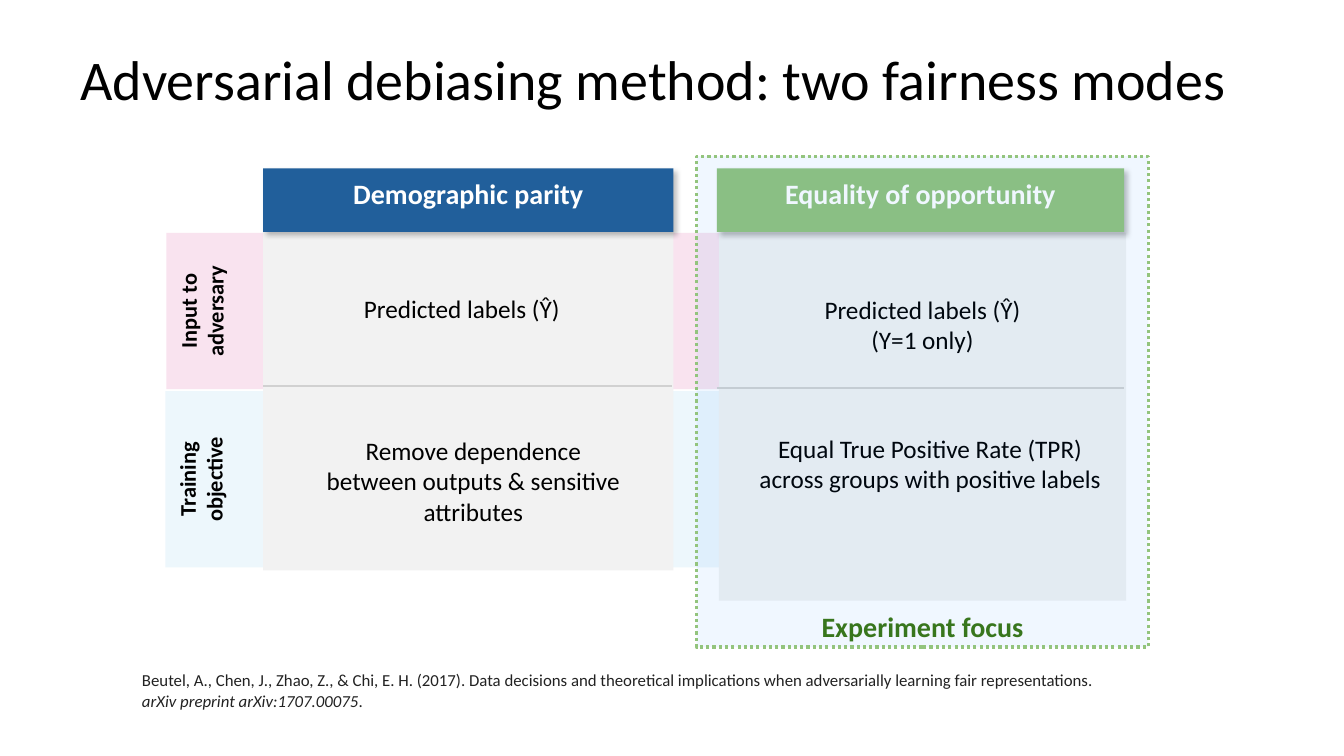
import pptx
import pptx.util
import pptx.dml.color
import pptx.enum.dml
import pptx.enum.shapes
import pptx.enum.text
import pptx.oxml
import pptx.oxml.ns

Inches, Pt = pptx.util.Inches, pptx.util.Pt
FONT = "Calibri"
NS = pptx.oxml.ns.nsdecls("a")

TITLE = "Adversarial debiasing method: two fairness modes"
BANDS = [
    ("Training objective", "EDF7FC", (1.64, 3.88, 9.51, 1.75)),
    ("Input to adversary", "F9E3EF", (1.65, 2.31, 9.51, 1.55)),
]
PANELS = [(2.61, 1.99, 4.07, 3.67), (7.13, 2.31, 4.04, 3.65)]
HEADERS = [
    ("Equality of opportunity", "93C47D", (7.11, 1.67, 4.04, 0.63)),
    ("Demographic parity", "215F9B", (2.61, 1.67, 4.07, 0.63)),
]
DIVIDERS = [(2.61, 3.83, 4.06), (7.11, 3.85, 4.04)]
CELLS = [
    (["Predicted labels (Ŷ)"], (3.47, 2.86, 2.22, 0.4)),
    (["Predicted labels (Ŷ)", "(Y=1 only)"], (7.13, 2.87, 4.04, 0.71)),
    (["Remove dependence", "between outputs & sensitive attributes"],
     (2.66, 4.27, 4.07, 1.32)),
    (["Equal True Positive Rate (TPR)", "across groups with positive labels"],
     (7.19, 4.25, 4.07, 0.71)),
]
FOCUS_BOX = (6.91, 1.55, 4.48, 4.87)
FOCUS = "Experiment focus"
CITATION = [
    "Beutel, A., Chen, J., Zhao, Z., & Chi, E. H. (2017). Data decisions and "
    "theoretical implications when adversarially learning fair representations.",
    "arXiv preprint arXiv:1707.00075",
]

prs = pptx.Presentation()
prs.slide_width, prs.slide_height = Inches(13.33), Inches(7.5)
s = prs.slides.add_slide(prs.slide_layouts[6])


def rgb(value):
    return pptx.dml.color.RGBColor.from_string(value)


def write(sp, lines, size, color="000000", bold=False, center=True,
          inset=(0.1, 0.05)):
    tf = sp.text_frame
    tf.word_wrap = True
    tf.vertical_anchor = pptx.enum.text.MSO_ANCHOR.TOP
    tf.margin_left = tf.margin_right = Inches(inset[0])
    tf.margin_top = tf.margin_bottom = Inches(inset[1])
    tf.text = "\n".join(lines)
    align = pptx.enum.text.PP_ALIGN
    for p in tf.paragraphs:
        p.alignment = align.CENTER if center else align.LEFT
        for r in p.runs:
            r.font.name, r.font.size, r.font.bold = FONT, Pt(size), bold
            r.font.color.rgb = rgb(color)
    return tf


def rect(box, fill):
    sp = s.shapes.add_shape(pptx.enum.shapes.MSO_SHAPE.RECTANGLE,
                            *map(Inches, box))
    sp.shadow.inherit = False
    sp.fill.solid()
    sp.fill.fore_color.rgb = rgb(fill)
    sp.line.fill.background()
    return sp


def textbox(box, lines, size, **style):
    return write(s.shapes.add_textbox(*map(Inches, box)), lines, size, **style)


def add_shadow(sp):
    effects = sp._element.spPr.find(pptx.oxml.ns.qn("a:effectLst"))
    effects.append(pptx.oxml.parse_xml(
        f'<a:outerShdw {NS} blurRad="{Pt(4)}" dist="{Pt(3)}" dir="2700000" '
        'algn="bl" rotWithShape="0"><a:srgbClr val="000000">'
        '<a:alpha val="25000"/></a:srgbClr></a:outerShdw>'))


for label, fill, (x, y, w, h) in BANDS:
    sp = rect((x + (w - h) / 2, y + (h - w) / 2, h, w), fill)
    sp.rotation = 270
    write(sp, [label], 16, bold=True, inset=(0.08, 0.08))

for box in PANELS:
    rect(box, "F2F2F2")

for label, fill, box in HEADERS:
    sp = rect(box, fill)
    add_shadow(sp)
    write(sp, [label], 20, "FFFFFF", bold=True, inset=(0.08, 0.08))

for x, y, w in DIVIDERS:
    line = s.shapes.add_connector(pptx.enum.shapes.MSO_CONNECTOR.STRAIGHT,
                                  *map(Inches, (x, y, x + w, y)))
    line.line.color.rgb = rgb("D1D1D1")
    line.line.width = Pt(1.5)
    line._element.spPr.append(pptx.oxml.parse_xml(f"<a:effectLst {NS}/>"))

for lines, box in CELLS:
    textbox(box, lines, 18)

focus = rect(FOCUS_BOX, "007DFF")
focus.fill._xPr.find(".//" + pptx.oxml.ns.qn("a:srgbClr")).append(
    pptx.oxml.parse_xml(f'<a:alpha {NS} val="6000"/>'))
focus.line.color.rgb = rgb("93C47D")
focus.line.width = Pt(2.25)
focus.line.dash_style = pptx.enum.dml.MSO_LINE.ROUND_DOT
textbox((7.74, 5.92, 2.82, 0.61), [FOCUS], 20, color="38761D", bold=True,
        inset=(0.13, 0.13))

tf = textbox((1.31, 6.6, 10.15, 0.5), CITATION, 12, color="222222", center=False)
p = tf.paragraphs[1]
p.runs[0].font.italic = True
r = p.add_run()
r.text = "."
r.font.name, r.font.size = FONT, Pt(12)
r.font.color.rgb = rgb("222222")

tf = textbox((0.7, 0.49, 12.42, 1.45), [TITLE], 40, center=False)
tf.paragraphs[0].line_spacing = 0.85

prs.save("out.pptx")
